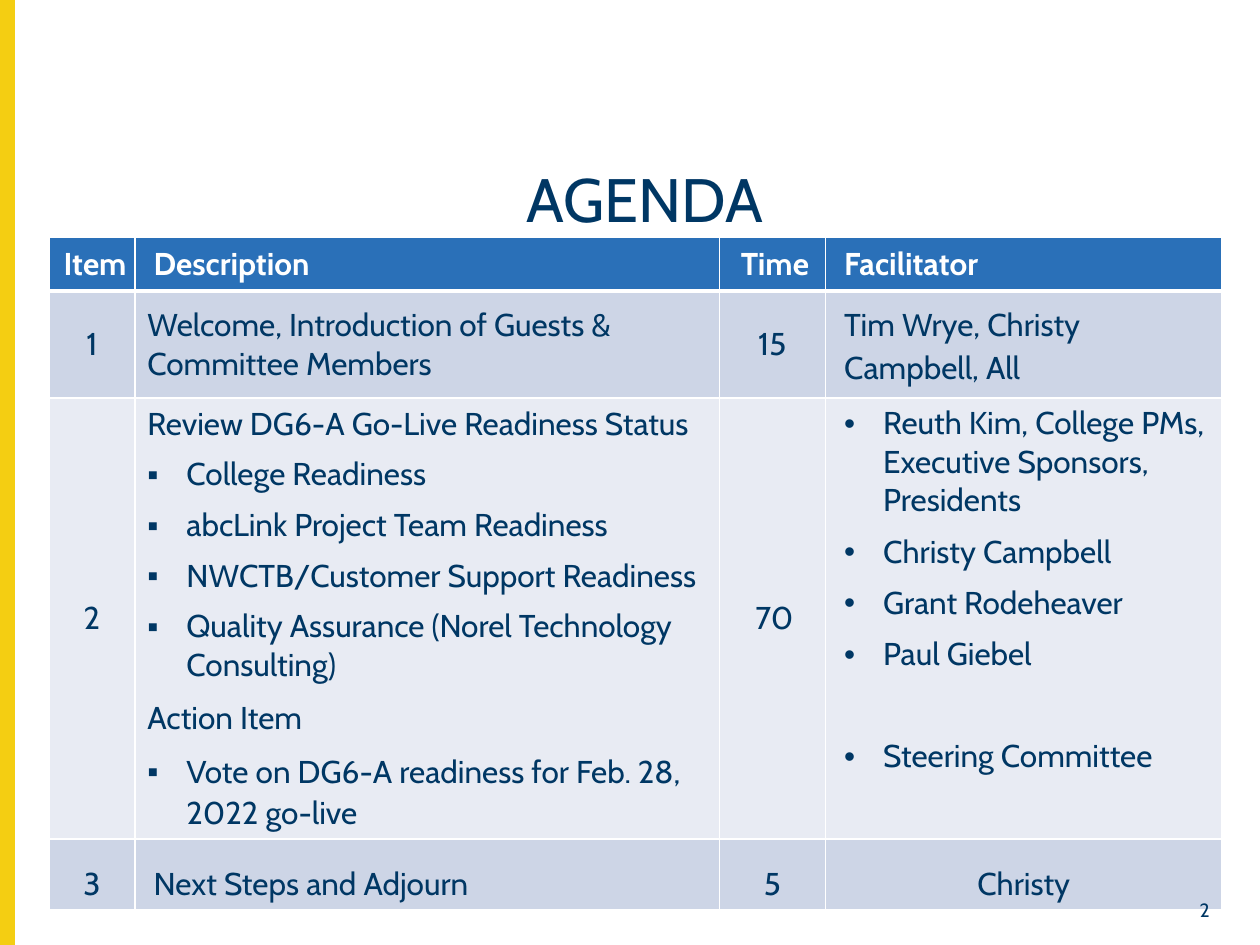
"""Build an agenda slide with a facilitator table."""
from lxml import etree
from pptx import Presentation
from pptx import util as u
from pptx.dml.color import RGBColor
from pptx.enum import shapes, text
from pptx.oxml.ns import qn

LEFT, CENTER, RIGHT = text.PP_ALIGN.LEFT, text.PP_ALIGN.CENTER, text.PP_ALIGN.RIGHT
MIDDLE, TOP = text.MSO_ANCHOR.MIDDLE, text.MSO_ANCHOR.TOP
NAVY, WHITE, YELLOW = "003764", "FFFFFF", "F4CE12"
BLUE, DARK_BAND, LIGHT_BAND = "2A70B8", "CDD5E6", "E8EBF3"


def color(value):
    return RGBColor.from_string(value)


def line(words, before=0, align=LEFT, indent=0, hang=0, bullet=None, spacing=1):
    return dict(words=words, before=before, align=align, indent=indent,
                hang=hang, bullet=bullet, spacing=spacing)


def square(words, before=7, spacing=1):
    return line(words, before, indent=0.31, hang=0.31, bullet="▪", spacing=spacing)


def dot(words, before=7.3):
    return line(words, before, indent=0.36, hang=0.31, bullet="•")


class Page:
    def __init__(self, deck, font="Cabin"):
        self.slide = deck.slides.add_slide(deck.slide_layouts[5])
        self.font = font

    def set_line(self, para, item, size=18, tint=NAVY, bold=False):
        para.text = item["words"]
        para.alignment = item["align"]
        para.line_spacing = item["spacing"]
        para.space_before = u.Pt(item["before"])
        for span in para.runs:
            span.font.name = self.font
            span.font.size = u.Pt(size)
            span.font.bold = bold
            span.font.color.rgb = color(tint)
        props = para._p.get_or_add_pPr()
        props.set("marL", str(u.Inches(item["indent"])))
        props.set("indent", str(-u.Inches(item["hang"])))
        if item["bullet"]:
            etree.SubElement(props, qn("a:buFont"), typeface="Arial")
            etree.SubElement(props, qn("a:buChar"), char=item["bullet"])
        else:
            etree.SubElement(props, qn("a:buNone"))

    def bar(self, left, top, width, height, tint):
        box = self.slide.shapes.add_shape(
            shapes.MSO_SHAPE.RECTANGLE, *map(u.Inches, (left, top, width, height)))
        box.shadow.inherit = False
        box.fill.solid()
        box.fill.fore_color.rgb = color(tint)
        box.line.color.rgb = color(tint)
        box.line.width = u.Pt(1)

    def title(self, words, left, top, width, height):
        box = self.slide.shapes.title
        box.left, box.top, box.width, box.height = map(u.Inches, (left, top, width, height))
        box.text_frame.auto_size = text.MSO_AUTO_SIZE.NONE
        box.text_frame.vertical_anchor = MIDDLE
        self.set_line(box.text_frame.paragraphs[0], line(words, align=CENTER, spacing=0.9), 35)

    def label(self, words, left, top, width, height):
        box = self.slide.shapes.add_textbox(*map(u.Inches, (left, top, width, height)))
        box.text_frame.word_wrap = True
        box.text_frame.vertical_anchor = MIDDLE
        self.set_line(box.text_frame.paragraphs[0], line(words, align=RIGHT), 11)

    def borders(self, cell, bottom):
        props = cell._tc.get_or_add_tcPr()
        for index, (side, width) in enumerate(zip("LRTB", (1, 1, 1, bottom))):
            edge = etree.Element(qn(f"a:ln{side}"), w=str(u.Pt(width)))
            fill = etree.SubElement(edge, qn("a:solidFill"))
            etree.SubElement(fill, qn("a:srgbClr"), val=WHITE)
            props.insert(index, edge)

    def cell(self, cell, items, fill, header, anchor):
        cell.fill.solid()
        cell.fill.fore_color.rgb = color(fill)
        cell.vertical_anchor = anchor
        for index, item in enumerate(items):
            frame = cell.text_frame
            para = frame.add_paragraph() if index else frame.paragraphs[0]
            self.set_line(para, item, tint=WHITE if header else NAVY, bold=header)

    def table(self, left, top, widths, heights, rows, fills):
        frame = self.slide.shapes.add_table(
            len(rows), len(widths), *map(u.Inches, (left, top, sum(widths), sum(heights))))
        grid = frame.table
        for column, width in zip(grid.columns, widths):
            column.width = u.Inches(width)
        for r, (row, height, fill) in enumerate(zip(rows, heights, fills)):
            grid.rows[r].height = u.Inches(height)
            for c, items in enumerate(row):
                cell = grid.cell(r, c)
                if c == 0:
                    cell.margin_left = cell.margin_right = 0
                    cell.margin_top = cell.margin_bottom = 0
                anchor = TOP if len(items) > 1 and c == 3 else MIDDLE
                self.cell(cell, items, fill, r == 0, anchor)
                self.borders(cell, 3 if r == 0 else 1)


ROWS = [
    [[line("Item", 3.2, CENTER, 0.05)], [line("Description", 3.2, indent=0.05)],
     [line("Time", 3.2, CENTER, 0.04)], [line("Facilitator", 3.2, indent=0.05)]],
    [[line("1", 0.2, CENTER)],
     [line("Welcome, Introduction of Guests & Committee Members", 0.3)],
     [line("15", 10.8, CENTER)],
     [line("Tim Wrye, Christy Campbell, All", 7.3, indent=0.05, spacing=1.12)]],
    [[line("2", 0, CENTER)],
     [line("Review DG6-A Go-Live Readiness Status", 7),
      square("College Readiness"),
      square("abcLink Project Team Readiness"),
      square("NWCTB/Customer Support Readiness"),
      square("Quality Assurance (Norel Technology Consulting)"),
      line("Action Item", 6.8, spacing=1.08),
      square("Vote on DG6-A readiness for Feb. 28, 2022 go-live", 6.8, 1.08)],
     [line("70", 0, CENTER, 0.03)],
     [dot("Reuth Kim, College PMs, Executive Sponsors, Presidents"),
      dot("Christy Campbell"), dot("Grant Rodeheaver"), dot("Paul Giebel"),
      dot("Steering Committee", 36.5)]],
    [[line("3", 10.6, CENTER, spacing=1.5)],
     [line("Next Steps and Adjourn", 10.5, indent=0.05, spacing=1.5)],
     [line("5", 9.1, CENTER, spacing=1.5)],
     [line("Christy", 10.5, CENTER, spacing=1.5)]],
]


def main():
    deck = Presentation()
    deck.slide_width, deck.slide_height = u.Inches(10), u.Inches(7.5)
    page = Page(deck)
    page.bar(0, 0, 0.11, 7.5, YELLOW)
    page.title("AGENDA", 0.68, 1.32, 8.88, 0.57)
    page.table(0.39, 1.88, (0.68, 4.64, 0.84, 3.15), (0.43, 0.85, 3.5, 0.55),
               ROWS, (BLUE, DARK_BAND, LIGHT_BAND, DARK_BAND))
    page.label("2", 9.19, 7.09, 0.51, 0.26)
    deck.save("out.pptx")


if __name__ == "__main__":
    main()
